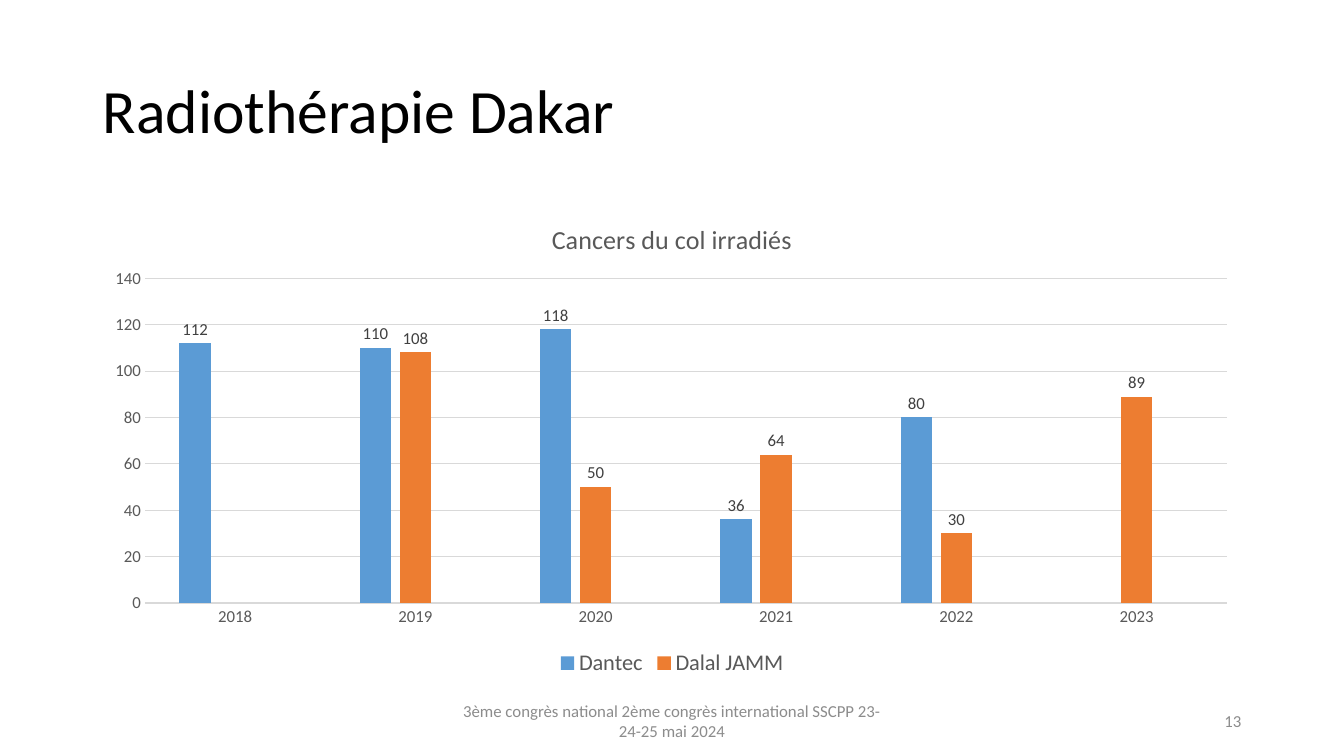
from lxml import etree
from pptx import Presentation
from pptx.chart.data import CategoryChartData
from pptx.dml.color import RGBColor
from pptx.enum.chart import XL_CHART_TYPE, XL_LABEL_POSITION, XL_LEGEND_POSITION, XL_TICK_MARK
from pptx.enum.text import MSO_ANCHOR, PP_ALIGN
from pptx.oxml import parse_xml
from pptx.oxml.ns import nsdecls, qn
from pptx.util import Inches, Pt

COLUMNS = XL_CHART_TYPE.COLUMN_CLUSTERED
OUTSIDE_END = XL_LABEL_POSITION.OUTSIDE_END
BOTTOM = XL_LEGEND_POSITION.BOTTOM
NO_TICK = XL_TICK_MARK.NONE
MIDDLE = MSO_ANCHOR.MIDDLE
LEFT, CENTER, RIGHT = PP_ALIGN.LEFT, PP_ALIGN.CENTER, PP_ALIGN.RIGHT

FONT = "Calibri"
GREY, RULE, FOOTER_GREY = "595959", "D9D9D9", "8C8C8C"
WIDTH, HEIGHT = 13.33, 7.5
MARGIN = 0.92
CONTENT_WIDTH = WIDTH - 2 * MARGIN
FOOTER_TOP, FOOTER_HEIGHT = 6.95, 0.4
PLOT_SHARES = {"x": 0.045, "y": 0.16, "w": 0.934, "h": 0.677}

YEARS = ["2018", "2019", "2020", "2021", "2022", "2023"]
SERIES = [
    ("Dantec", [112, 110, 118, 36, 80, None], "5B9BD5"),
    ("Dalal JAMM", [None, 108, 50, 64, 30, 89], "ED7D31"),
    ("Series 3", [None] * len(YEARS), "A5A5A5"),
]


def color(value):
    return RGBColor.from_string(value)


def format_font(font, size, value):
    font.name = FONT
    font.size = Pt(size)
    font.bold = False
    font.color.rgb = color(value)


def set_text(shape, text, size, value, alignment):
    frame = shape.text_frame
    frame.text = text
    frame.word_wrap = True
    frame.vertical_anchor = MIDDLE
    paragraph = frame.paragraphs[0]
    paragraph.alignment = alignment
    format_font(paragraph.runs[0].font, size, value)
    return paragraph


def add_title(slide, box):
    title = slide.shapes.title
    title.left, title.top, title.width, title.height = map(Inches, box)
    paragraph = set_text(title, "Radiothérapie Dakar", 44, "000000", LEFT)
    paragraph.line_spacing = 0.9


def format_axis(axis):
    axis.major_tick_mark = axis.minor_tick_mark = NO_TICK
    format_font(axis.tick_labels.font, 12, GREY)


def format_rule(line):
    line.color.rgb = color(RULE)
    line.width = Pt(0.75)


def format_series(series, value):
    series.format.fill.solid()
    series.format.fill.fore_color.rgb = color(value)
    labels = series.data_labels
    labels.show_value = True
    labels.position = OUTSIDE_END
    format_font(labels.font, 12, "404040")


def place_plot(chart):
    plot_area = chart._chartSpace.find(".//" + qn("c:plotArea"))
    for layout in plot_area.findall(qn("c:layout")):
        plot_area.remove(layout)
    layout = parse_xml(f"<c:layout {nsdecls('c')}><c:manualLayout/></c:layout>")
    settings = {"layoutTarget": "inner", "xMode": "edge", "yMode": "edge", **PLOT_SHARES}
    for name, value in settings.items():
        etree.SubElement(layout[0], qn("c:" + name)).set("val", str(value))
    plot_area.insert(0, layout)


def add_legend(chart, hidden_index):
    chart.has_legend = True
    legend = chart.legend
    legend.position = BOTTOM
    legend.include_in_layout = False
    format_font(legend.font, 16, GREY)
    entry = parse_xml(
        f'<c:legendEntry {nsdecls("c")}><c:idx val="{hidden_index}"/>'
        '<c:delete val="1"/></c:legendEntry>'
    )
    legend._element.find(qn("c:legendPos")).addnext(entry)


def add_cancer_chart(slide, box):
    data = CategoryChartData()
    data.categories = YEARS
    for name, values, _ in SERIES:
        data.add_series(name, values)
    chart = slide.shapes.add_chart(COLUMNS, *map(Inches, box), data).chart
    format_font(chart.font, 10, "000000")

    chart.has_title = True
    title_frame = chart.chart_title.text_frame
    title_frame.text = "Cancers du col irradiés"
    format_font(title_frame.paragraphs[0].runs[0].font, 18.6, GREY)
    chart.chart_title.include_in_layout = False

    plot = chart.plots[0]
    plot.gap_width, plot.overlap = 219, -27
    plot.vary_by_categories = False
    for series, (_, _, value) in zip(plot.series, SERIES):
        format_series(series, value)

    format_axis(chart.category_axis)
    format_rule(chart.category_axis.format.line)
    value_axis = chart.value_axis
    format_axis(value_axis)
    value_axis.minimum_scale, value_axis.maximum_scale = 0, 140
    value_axis.major_unit = 20
    value_axis.format.line.fill.background()
    format_rule(value_axis.major_gridlines.format.line)

    add_legend(chart, len(SERIES) - 1)
    place_plot(chart)


def add_footer_text(slide, box, text, alignment):
    shape = slide.shapes.add_textbox(*map(Inches, box))
    set_text(shape, text, 12, FOOTER_GREY, alignment)


def add_footer(slide, top, height):
    center_width, number_width = 4.5, 3
    add_footer_text(
        slide,
        ((WIDTH - center_width) / 2, top, center_width, height),
        "3ème congrès national 2ème congrès international SSCPP 23-24-25 mai 2024",
        CENTER,
    )
    number_left = WIDTH - MARGIN - number_width
    add_footer_text(slide, (number_left, top, number_width, height), "13", RIGHT)


def main():
    presentation = Presentation()
    presentation.slide_width = Inches(WIDTH)
    presentation.slide_height = Inches(HEIGHT)
    slide = presentation.slides.add_slide(presentation.slide_layouts.get_by_name("Title Only"))
    add_title(slide, (MARGIN, 0.4, CONTENT_WIDTH, 1.45))
    add_cancer_chart(slide, (MARGIN, 2, CONTENT_WIDTH, 4.76))
    add_footer(slide, FOOTER_TOP, FOOTER_HEIGHT)
    presentation.save("out.pptx")


if __name__ == "__main__":
    main()
